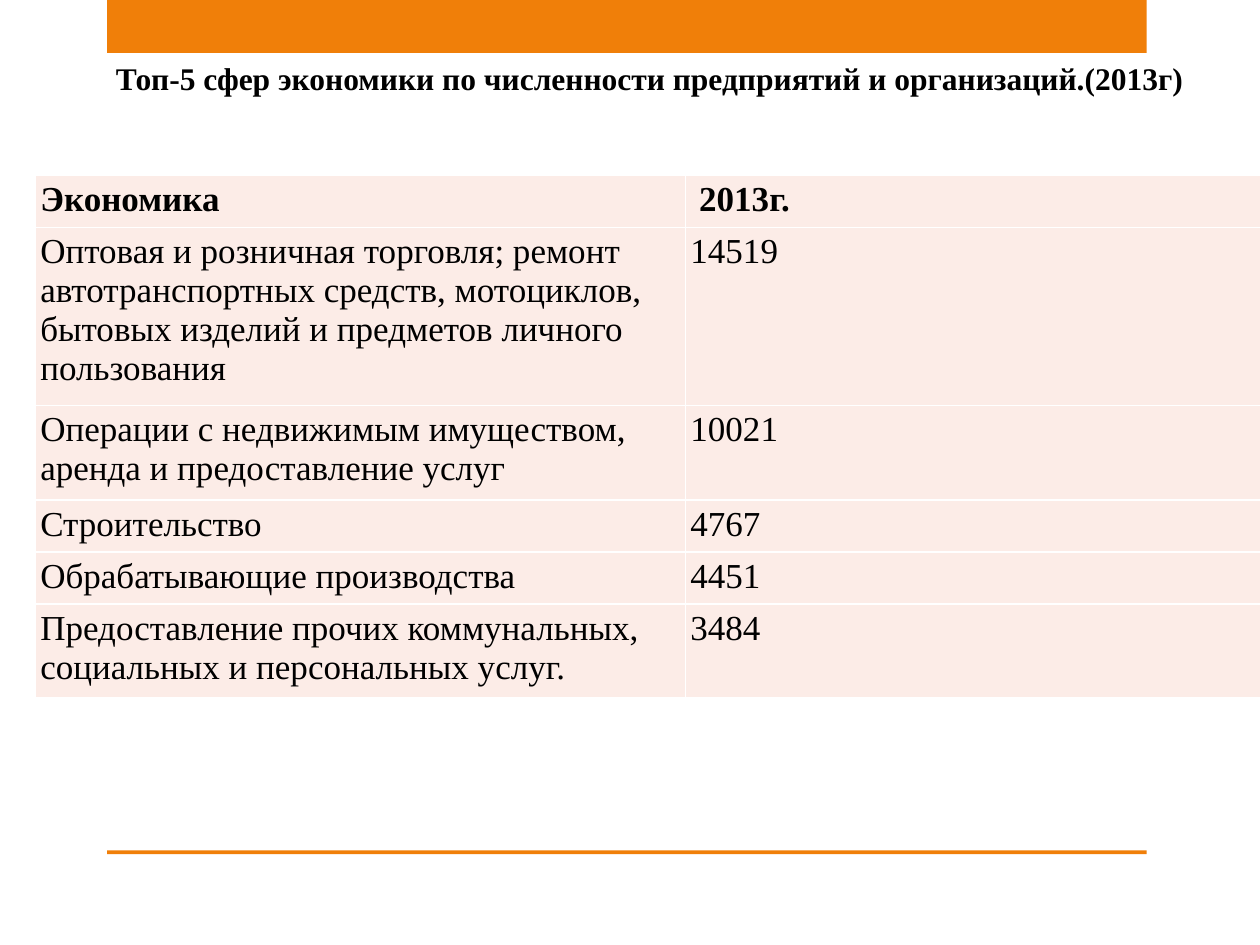
from lxml import etree
from pptx import Presentation
from pptx.dml.color import RGBColor
from pptx.enum import shapes, text
from pptx.oxml.ns import qn
from pptx.util import Inches, Pt

ORANGE, PINK, WHITE, BLACK = "F07F09", "FCECE7", "FFFFFF", "000000"
FONT = "Times New Roman"
TITLE = "Топ-5 сфер экономики по численности предприятий и организаций.(2013г)"
ROWS = [
    ("Экономика", " 2013г.", 0.4),
    ("Оптовая и розничная торговля; ремонт автотранспортных средств, мотоциклов, "
     "бытовых изделий и предметов личного пользования", "14519", 1.41),
    ("Операции с недвижимым имуществом, аренда и предоставление услуг", "10021", 0.75),
    ("Строительство", "4767", 0.41),
    ("Обрабатывающие производства", "4451", 0.41),
    ("Предоставление прочих коммунальных, социальных и персональных услуг.", "3484", 0.74),
]


def rgb(value):
    return RGBColor.from_string(value)


def write(tf, content, size=20, bold=False, color=BLACK):
    p = tf.paragraphs[0]
    p.alignment = text.PP_ALIGN.LEFT
    r = p.add_run()
    r.text = content
    r.font.name, r.font.size, r.font.bold = FONT, Pt(size), bold
    r.font.color.rgb = rgb(color)


def add_band(s, left, top, width, height):
    sp = s.shapes.add_shape(shapes.MSO_SHAPE.RECTANGLE, Inches(left), Inches(top),
                            Inches(width), Inches(height))
    sp.shadow.inherit = False
    sp.fill.solid()
    sp.fill.fore_color.rgb = rgb(ORANGE)
    sp.line.fill.background()


def place_title(s, left, top, width, height):
    sp = s.shapes.title
    sp.left, sp.top, sp.width, sp.height = map(Inches, (left, top, width, height))
    tf = sp.text_frame
    tf.word_wrap = True
    tf.auto_size = text.MSO_AUTO_SIZE.SHAPE_TO_FIT_TEXT
    tf.vertical_anchor = text.MSO_ANCHOR.TOP
    write(tf, TITLE, size=18, bold=True)


def set_borders(cell, color, width):
    tc_pr = cell._tc.get_or_add_tcPr()
    for i, side in enumerate(("lnL", "lnR", "lnT", "lnB")):
        ln = etree.Element(qn(f"a:{side}"), w=str(Pt(width)))
        fill = etree.SubElement(ln, qn("a:solidFill"))
        etree.SubElement(fill, qn("a:srgbClr"), val=color)
        tc_pr.insert(i, ln)


def add_sector_table(s, left, top, width):
    height = sum(row[-1] for row in ROWS)
    table = s.shapes.add_table(len(ROWS), 2, Inches(left), Inches(top),
                               Inches(width), Inches(height)).table
    for column in table.columns:
        column.width = Inches(width / 2)
    for i, (sector, count, row_height) in enumerate(ROWS):
        table.rows[i].height = Inches(row_height)
        for cell, content in zip(table.rows[i].cells, (sector, count)):
            cell.margin_left = cell.margin_right = Inches(0.04)
            cell.margin_top = cell.margin_bottom = Inches(0.04)
            cell.fill.solid()
            cell.fill.fore_color.rgb = rgb(PINK)
            set_borders(cell, WHITE, 1)
            write(cell.text_frame, content, bold=i == 0)


def main():
    prs = Presentation()
    prs.slide_width, prs.slide_height = Inches(10), Inches(7.5)
    s = prs.slides.add_slide(prs.slide_layouts[5])
    add_band(s, 0.85, 0, 8.25, 0.42)
    add_band(s, 0.85, 6.75, 8.25, 0.03)
    place_title(s, 0.82, 0.42, 9.45, 0.4)
    add_sector_table(s, 0.28, 1.39, 10.32)
    prs.save("out.pptx")


if __name__ == "__main__":
    main()
